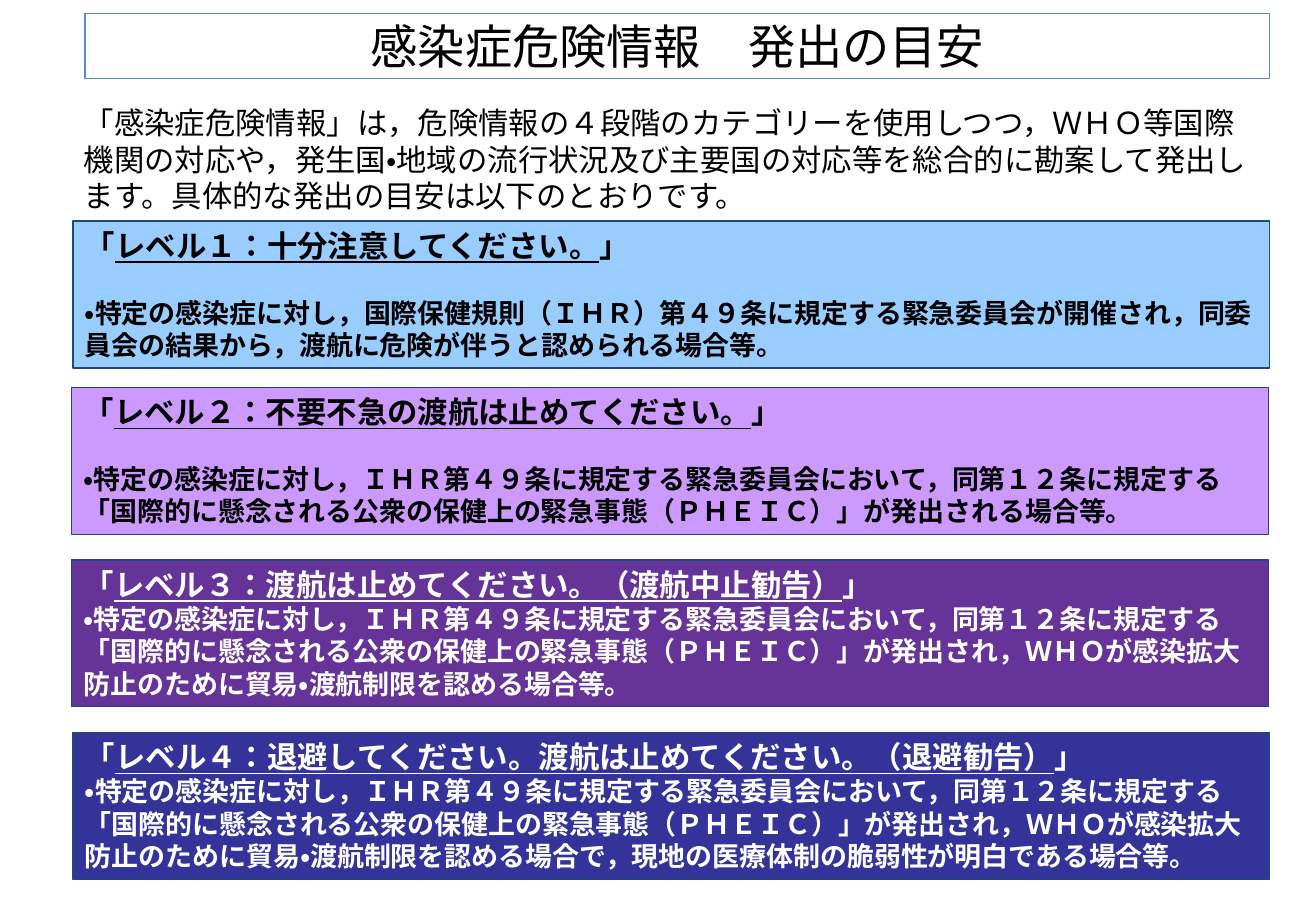
"""Build the slide on criteria for issuing infectious disease travel warnings."""
from dataclasses import dataclass

from pptx import Presentation
from pptx.dml.color import RGBColor
from pptx.enum.lang import MSO_LANGUAGE_ID as Language
from pptx.enum.shapes import MSO_SHAPE as Shape
from pptx.enum.text import MSO_ANCHOR as Anchor, PP_ALIGN as Align
from pptx.util import Inches, Pt


@dataclass(frozen=True)
class Theme:
    """Colours, fonts and type sizes of the slide."""
    black: str = "000000"
    white: str = "FFFFFF"
    title_line: str = "558ED5"
    level_line: str = "1F497D"
    level_fills: tuple = ("99CCFF", "CC99FF", "663399", "333399")
    plain_font: str = "Calibri"
    level_font: str = "Arial"
    title_size: int = 28
    lead_size: int = 18
    body_size: int = 16
    line_width: float = 0.75


THEME = Theme()
TITLE = "感染症危険情報　発出の目安"
INTRO = (
    "「感染症危険情報」は，危険情報の４段階のカテゴリーを使用しつつ，ＷＨＯ等国際機関の対応や，"
    "発生国・地域の流行状況及び主要国の対応等を総合的に勘案して発出します。"
    "具体的な発出の目安は以下のとおりです。"
)
COMMITTEE = (
    "・特定の感染症に対し，ＩＨＲ第４９条に規定する緊急委員会において，"
    "同第１２条に規定する「国際的に懸念される公衆の保健上の緊急事態（ＰＨＥＩＣ）」が"
)
RESTRICTION = COMMITTEE + "発出され，ＷＨＯが感染拡大防止のために貿易・渡航制限を認める場合"
LEVELS = (
    (0.6, 1.82, THEME.black, 19.3, "レベル１：十分注意してください。",
     "・特定の感染症に対し，国際保健規則（ＩＨＲ）第４９条に規定する緊急委員会が開催され，"
     "同委員会の結果から，渡航に危険が伴うと認められる場合等。"),
    (0.59, 3.19, THEME.black, 19.3, "レベル２：不要不急の渡航は止めてください。",
     COMMITTEE + "発出される場合等。"),
    (0.59, 4.61, THEME.white, 0, "レベル３：渡航は止めてください。（渡航中止勧告）",
     RESTRICTION + "等。"),
    (0.6, 6.03, THEME.white, 0, "レベル４：退避してください。渡航は止めてください。（退避勧告）",
     RESTRICTION + "で，現地の医療体制の脆弱性が明白である場合等。"),
)


def add_run(paragraph, text, size, font_name, color, bold=False, underline=False):
    """Append one styled run to a paragraph."""
    run = paragraph.add_run()
    run.text = text
    font = run.font
    font.size = Pt(size)
    font.name = font_name
    font.bold = bold
    font.underline = underline
    font.language_id = Language.JAPANESE
    font.color.rgb = RGBColor.from_string(color)


def add_box(slide, left, top, width, height, line, fill=None, anchor=Anchor.TOP):
    """Add an outlined rectangle and return its text frame."""
    shape = slide.shapes.add_shape(
        Shape.RECTANGLE, Inches(left), Inches(top), Inches(width), Inches(height))
    shape.shadow.inherit = False
    shape.line.color.rgb = RGBColor.from_string(line)
    shape.line.width = Pt(THEME.line_width)
    if fill:
        shape.fill.solid()
        shape.fill.fore_color.rgb = RGBColor.from_string(fill)
    else:
        shape.fill.background()
    frame = shape.text_frame
    frame.word_wrap = True
    frame.vertical_anchor = anchor
    return frame


def add_title(slide):
    """Add the outlined, centred title."""
    frame = add_box(slide, 0.7, 0.11, 9.75, 0.54, THEME.title_line, anchor=Anchor.MIDDLE)
    paragraph = frame.paragraphs[0]
    paragraph.alignment = Align.CENTER
    add_run(paragraph, TITLE, THEME.title_size, THEME.plain_font, THEME.black)


def add_intro(slide):
    """Add the introductory text."""
    box = slide.shapes.add_textbox(Inches(0.59), Inches(0.81), Inches(9.85), Inches(1.01))
    box.text_frame.word_wrap = True
    add_run(box.text_frame.paragraphs[0], INTRO,
            THEME.lead_size, THEME.plain_font, THEME.black)


def add_level(slide, fill, left, top, color, gap, heading, body):
    """Add one warning level with its underlined heading and criteria."""
    frame = add_box(slide, left, top, 9.85, 1.21, THEME.level_line, fill)
    lead = frame.paragraphs[0]
    lead.alignment = Align.LEFT
    for text, underline in (("「", False), (heading, True), ("」", False)):
        add_run(lead, text, THEME.lead_size, THEME.level_font, color, True, underline)
    criteria = frame.add_paragraph()
    criteria.alignment = Align.LEFT
    criteria.space_before = Pt(gap)
    add_run(criteria, body, THEME.body_size, THEME.level_font, color, True)


def main():
    """Build and save the slide."""
    presentation = Presentation()
    presentation.slide_width = Inches(10.83)
    presentation.slide_height = Inches(7.5)
    slide = presentation.slides.add_slide(presentation.slide_layouts[6])
    add_title(slide)
    for fill, level in zip(THEME.level_fills, LEVELS):
        add_level(slide, fill, *level)
    add_intro(slide)
    presentation.save("out.pptx")


if __name__ == "__main__":
    main()
